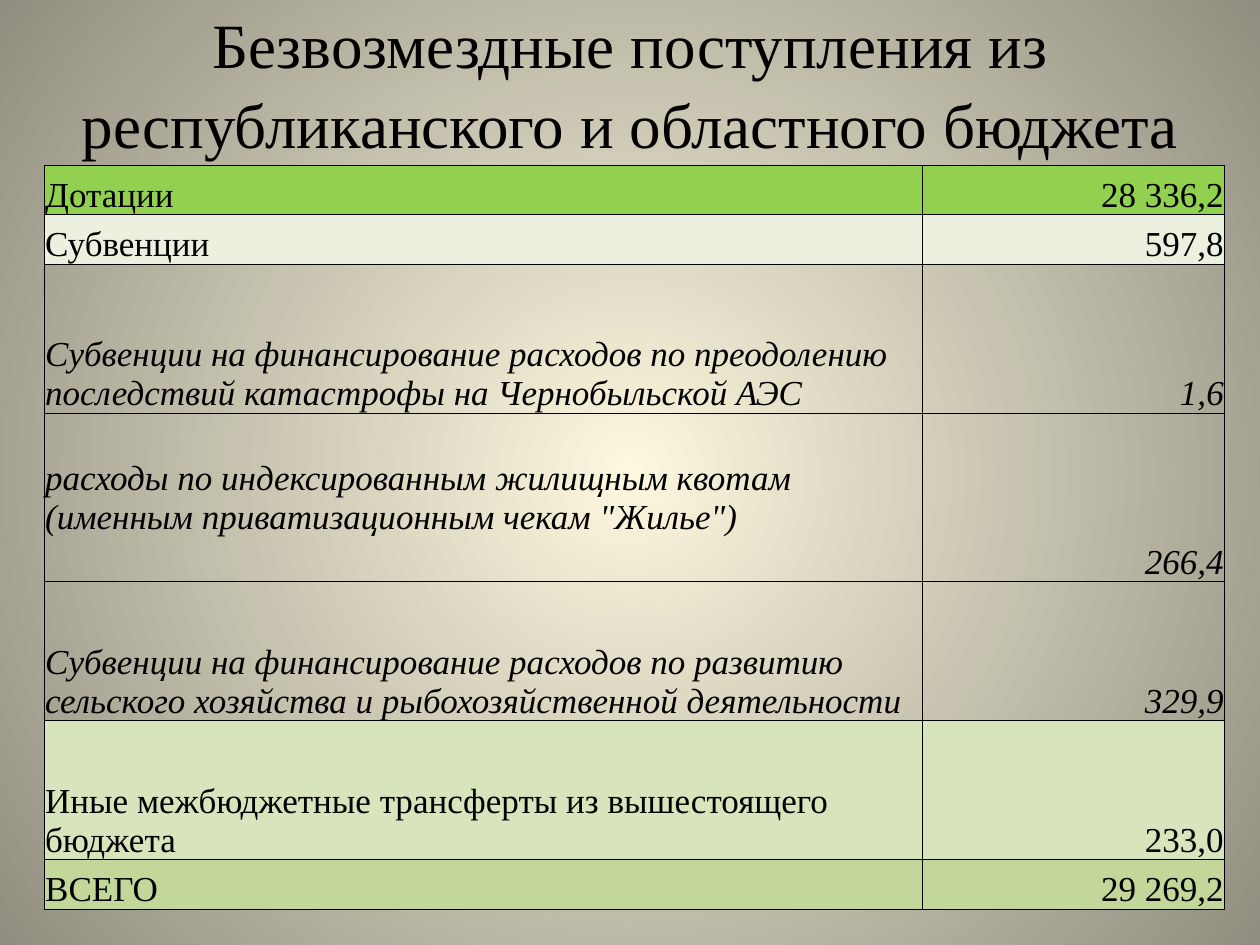
from lxml.etree import SubElement as Sub
from pptx import Presentation
from pptx.dml.color import RGBColor as Rgb
from pptx.enum.text import MSO_ANCHOR as Anchor, PP_ALIGN as Align
from pptx.oxml.ns import qn
from pptx.util import Cm, Pt

FACE = "Times New Roman"
INK = "000000"
COLS = [17.7, 6.1]
# label, value, row height in cm, fill (None = see-through), italic
ROWS = [
    ("Дотации", "28 336,2", 1, "92D050", False),
    ("Субвенции", "597,8", 1, "EBF1DE", False),
    ("Субвенции на финансирование расходов по преодолению последствий "
     "катастрофы на Чернобыльской АЭС", "1,6", 3, None, True),
    ("расходы по индексированным жилищным квотам (именным "
     "приватизационным чекам \"Жилье\")", "266,4", 3.4, None, True),
    ("Субвенции на финансирование расходов по развитию сельского "
     "хозяйства и рыбохозяйственной деятельности", "329,9", 2.8, None, True),
    ("Иные межбюджетные трансферты из вышестоящего бюджета", "233,0",
     2.8, "D8E4BC", False),
    ("ВСЕГО", "29 269,2", 1, "C4D79B", False),
]
MID_ROW = 3  # its label is centred vertically


def tint(code):
    return Rgb.from_string(code)


def put(obj, form):
    for name, val in form.items():
        setattr(obj, name, val)


def write(frame, text, align, size, italic=False):
    par = frame.paragraphs[0]
    par.alignment = align
    run = par.add_run()
    run.text = text
    put(run.font, {"name": FACE, "size": Pt(size), "italic": italic})
    run.font.color.rgb = tint(INK)
    return par


def edge(cell):
    """Thin line on all four sides of a cell."""
    props = cell._tc.get_or_add_tcPr()
    for side in "LRTB":
        line = Sub(props, qn(f"a:ln{side}"), w=str(Pt(0.5)))
        fill = Sub(line, qn("a:solidFill"))
        Sub(fill, qn("a:srgbClr"), val=INK)


def back(slide):
    """Round gradient spreading from the centre of the slide."""
    fill = slide.background.fill
    fill.gradient()
    for stop, code in zip(fill.gradient_stops, ("FCF7DD", "918E81")):
        stop.color.rgb = tint(code)
    grad = next(slide.element.iter(qn("a:gradFill")))
    grad.remove(grad.find(qn("a:lin")))
    way = Sub(grad, qn("a:path"), path="circle")
    Sub(way, qn("a:fillToRect"), {side: "50000" for side in "ltrb"})


def title(slide, left, top, width, height):
    box = slide.shapes.add_textbox(Cm(left), Cm(top), Cm(width), Cm(height))
    frame = box.text_frame
    put(frame, {"word_wrap": True, "vertical_anchor": Anchor.MIDDLE})
    par = write(frame, "Безвозмездные поступления из республиканского "
                "и областного бюджета", Align.CENTER, 36)
    par.line_spacing = 1.05


def grid(slide, left, top):
    high = sum(row[2] for row in ROWS)
    table = slide.shapes.add_table(
        len(ROWS), len(COLS), Cm(left), Cm(top), Cm(sum(COLS)), Cm(high)).table
    put(table, {"first_row": False, "horz_banding": False})
    for col, width in zip(table.columns, COLS):
        col.width = Cm(width)
    form = {"margin_left": Cm(0.02), "margin_right": Cm(0.02),
            "margin_top": Cm(0.02), "margin_bottom": 0,
            "vertical_anchor": Anchor.BOTTOM}
    for row, (label, value, tall, code, italic) in zip(table.rows, ROWS):
        row.height = Cm(tall)
        pairs = ((label, Align.LEFT), (value, Align.RIGHT))
        for cell, (text, align) in zip(row.cells, pairs):
            put(cell, form)
            edge(cell)
            if code:
                cell.fill.solid()
                cell.fill.fore_color.rgb = tint(code)
            else:
                cell.fill.background()
            write(cell.text_frame, text, align, 20, italic)
    table.cell(MID_ROW, 0).vertical_anchor = Anchor.MIDDLE


def main():
    deck = Presentation()
    put(deck, {"slide_width": Cm(25.4), "slide_height": Cm(19.05)})
    slide = deck.slides.add_slide(deck.slide_layouts[6])
    back(slide)
    title(slide, 1.27, 0.05, 22.86, 3.18)
    grid(slide, 0.89, 3.33)
    deck.save("out.pptx")


if __name__ == "__main__":
    main()
